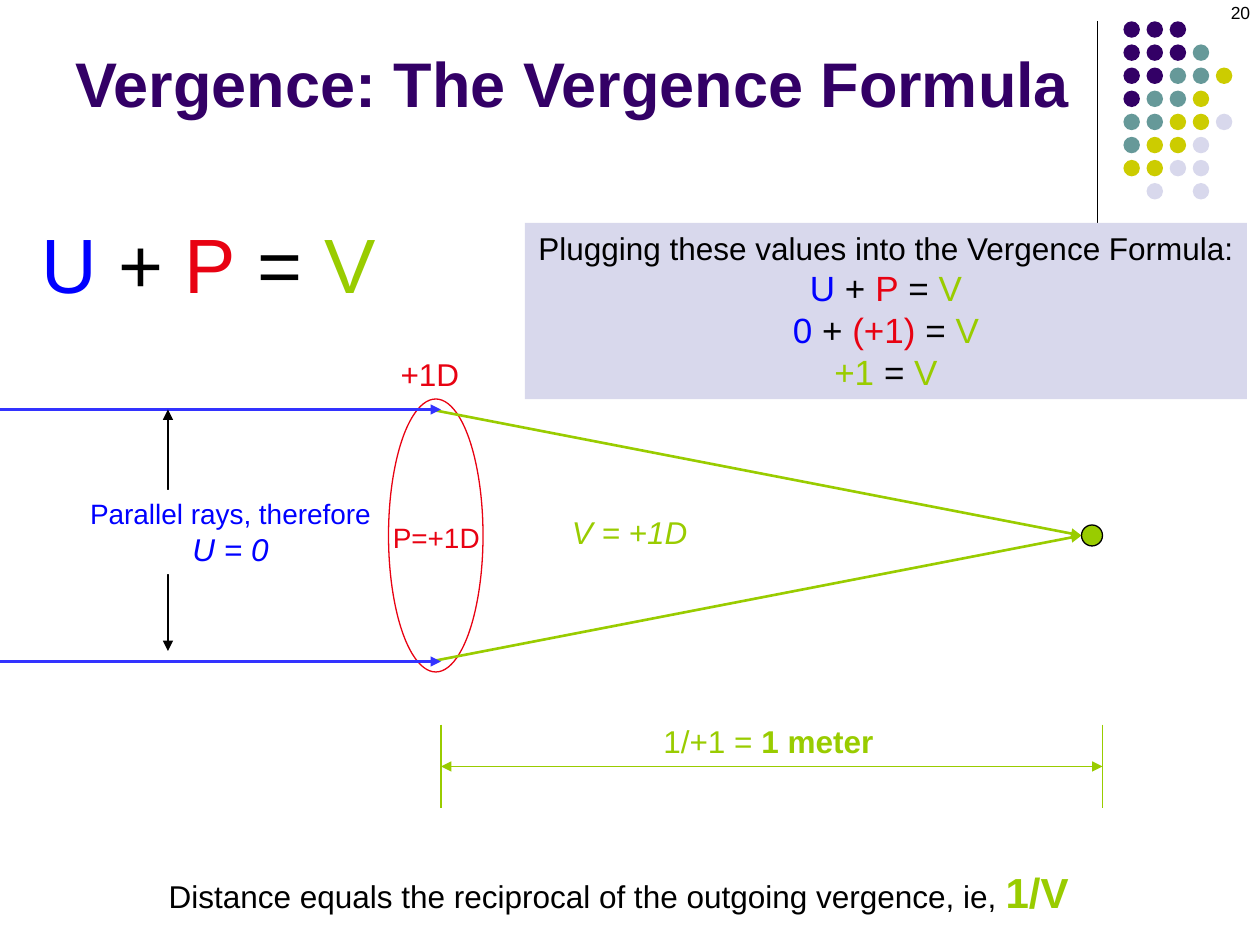
"""Build the slide explaining the vergence formula with a converging lens."""
from lxml import etree
from pptx import Presentation
from pptx.dml.color import RGBColor
from pptx.enum.shapes import MSO_CONNECTOR, MSO_SHAPE
from pptx.enum.text import MSO_ANCHOR, MSO_AUTO_SIZE, PP_ALIGN
from pptx.oxml.ns import qn
from pptx.util import Pt

OVAL, RECTANGLE = MSO_SHAPE.OVAL, MSO_SHAPE.RECTANGLE
STRAIGHT = MSO_CONNECTOR.STRAIGHT
LEFT, CENTER, RIGHT = PP_ALIGN.LEFT, PP_ALIGN.CENTER, PP_ALIGN.RIGHT
TOP, BOTTOM = MSO_ANCHOR.TOP, MSO_ANCHOR.BOTTOM
FIT, FIXED = MSO_AUTO_SIZE.SHAPE_TO_FIT_TEXT, MSO_AUTO_SIZE.NONE

BLACK, WHITE, BLUE, RAY_BLUE = "000000", "FFFFFF", "0000FF", "3333FF"
RED, GREEN, PURPLE, LAVENDER = "E80212", "99CC00", "330066", "D8D8EC"

DOT_COLORS = {"p": PURPLE, "t": "669999", "y": "CCCC00", "l": LAVENDER}
DOT_ROWS = ["ppp", "pppt", "pptty", "ptty", "ttyyl", "tyyl", "yyll", ".l.l"]
DOT_LEFT, DOT_TOP, DOT_PITCH, DOT_SIZE = 642, 12.2, 13.2, 9.4

LENS = (222, 228, 54, 156)
FOCUS = (618, 300, 12, 12)
RAY_HEIGHTS = (234, 378)
FOCUS_X, FOCUS_Y = 618, 306
LENS_X, IMAGE_X = 252, 630

FORMULA = [("U", BLUE), (" + ", BLACK), ("P", RED), (" = ", BLACK), ("V", GREEN)]
VALUES = [("0", BLUE), (" + ", BLACK), ("(+1)", RED), (" = ", BLACK), ("V", GREEN)]
RESULT = [("+1 ", GREEN), ("=", BLACK), (" V", GREEN)]

TEXTS = [
    ((372, 409, 134.6, 29), [(18, [("1/+1 = ", GREEN), ("1 meter", GREEN, "bold")])], {}),
    ((319.7, 289.4, 81.4, 29), [(18, [("V = +1D", GREEN, "italic")])], {}),
    ((16.6, 120.2, 205.2, 60), [(44, FORMULA)], {}),
    ((43.9, 280, 175.7, 48.2),
     [(16, [("Parallel rays, therefore", BLUE)]), (18, [("U = 0", BLUE, "italic")])],
     {"fill": WHITE, "align": CENTER}),
    ((221.8, 199.4, 48.2, 29), [(18, [("+1D", RED)])], {}),
    ((300, 127.4, 412.6, 100.8),
     [(18, [("Plugging these values into the Vergence Formula:", BLACK)]),
      (20, FORMULA), (20, VALUES), (20, RESULT)],
     {"fill": LAVENDER, "align": CENTER}),
    ((36, 9.4, 594, 62.6), [(36, [("Vergence: The Vergence Formula", PURPLE, "bold")])],
     {"wrap": True, "anchor": BOTTOM}),
    ((89.3, 491.8, 528.5, 36),
     [(18, [("Distance equals the reciprocal of the outgoing vergence, ie, ", BLACK),
            ("1/V", GREEN, "bold", 24)])], {}),
    ((553.7, -2.2, 167.8, 36), [(10, [("20", BLACK)])], {"wrap": True, "align": RIGHT}),
    ((217.4, 293.8, 64.8, 26.6), [(16, [("P=+1D", RED)])], {}),
]


def color(value):
    return RGBColor.from_string(value)


def add_shape(page, kind, bounds, fill=None, line=None):
    shape = page.shapes.add_shape(kind, *map(Pt, bounds))
    shape.shadow.inherit = False
    if fill:
        shape.fill.solid()
        shape.fill.fore_color.rgb = color(fill)
    else:
        shape.fill.background()
    if line:
        shape.line.color.rgb = color(line)
        shape.line.width = Pt(0.75)
    else:
        shape.line.fill.background()
    return shape


def add_line(page, start, end, stroke, width=0.75, arrows=()):
    line = page.shapes.add_connector(STRAIGHT, *map(Pt, (*start, *end)))
    line.line.color.rgb = color(stroke)
    line.line.width = Pt(width)
    outline = line.line._get_or_add_ln()
    for side in arrows:
        etree.SubElement(outline, qn(f"a:{side}"), type="triangle")
    etree.SubElement(line._element.spPr, qn("a:effectLst"))


def add_text(page, bounds, paragraphs, fill=None, align=LEFT, anchor=TOP, wrap=False):
    if fill:
        box = add_shape(page, RECTANGLE, bounds, fill)
    else:
        box = page.shapes.add_textbox(*map(Pt, bounds))
    frame = box.text_frame
    frame.word_wrap = wrap
    frame.auto_size = FIXED if wrap else FIT
    frame.vertical_anchor = anchor
    for index, (size, spans) in enumerate(paragraphs):
        para = frame.add_paragraph() if index else frame.paragraphs[0]
        para.alignment = align
        for words, ink, *extra in spans:
            span = para.add_run()
            span.text = words
            font = span.font
            font.name = "Arial"
            font.color.rgb = color(ink)
            font.bold = "bold" in extra
            font.italic = "italic" in extra
            font.size = Pt(extra[1] if len(extra) > 1 else size)


def add_dots(page):
    for row, codes in enumerate(DOT_ROWS):
        for column, code in enumerate(codes):
            if code in DOT_COLORS:
                left, top = DOT_LEFT + column * DOT_PITCH, DOT_TOP + row * DOT_PITCH
                add_shape(page, OVAL, (left, top, DOT_SIZE, DOT_SIZE), DOT_COLORS[code])


def add_diagram(page):
    both = ("headEnd", "tailEnd")
    add_shape(page, OVAL, LENS, line=RED)
    add_line(page, (LENS_X, 438), (IMAGE_X, 438), GREEN, arrows=both)
    for x in (LENS_X, IMAGE_X):
        add_line(page, (x, 414), (x, 462), GREEN)
    for y in RAY_HEIGHTS:
        add_line(page, (246, y), (FOCUS_X, FOCUS_Y), GREEN, 1.5, ("tailEnd",))
    add_shape(page, OVAL, FOCUS, GREEN, BLACK)
    for y in RAY_HEIGHTS:
        add_line(page, (0, y), (LENS_X, y), RAY_BLUE, 1.5, ("tailEnd",))
    add_line(page, (96, 234), (96, 372), BLACK, arrows=both)


def main():
    deck = Presentation()
    deck.slide_width, deck.slide_height = Pt(720), Pt(540)
    page = deck.slides.add_slide(deck.slide_layouts[6])
    add_line(page, (627, 12), (627, 132), BLACK)
    add_dots(page)
    add_diagram(page)
    for bounds, paragraphs, style in TEXTS:
        add_text(page, bounds, paragraphs, **style)
    deck.save("out.pptx")


if __name__ == "__main__":
    main()
